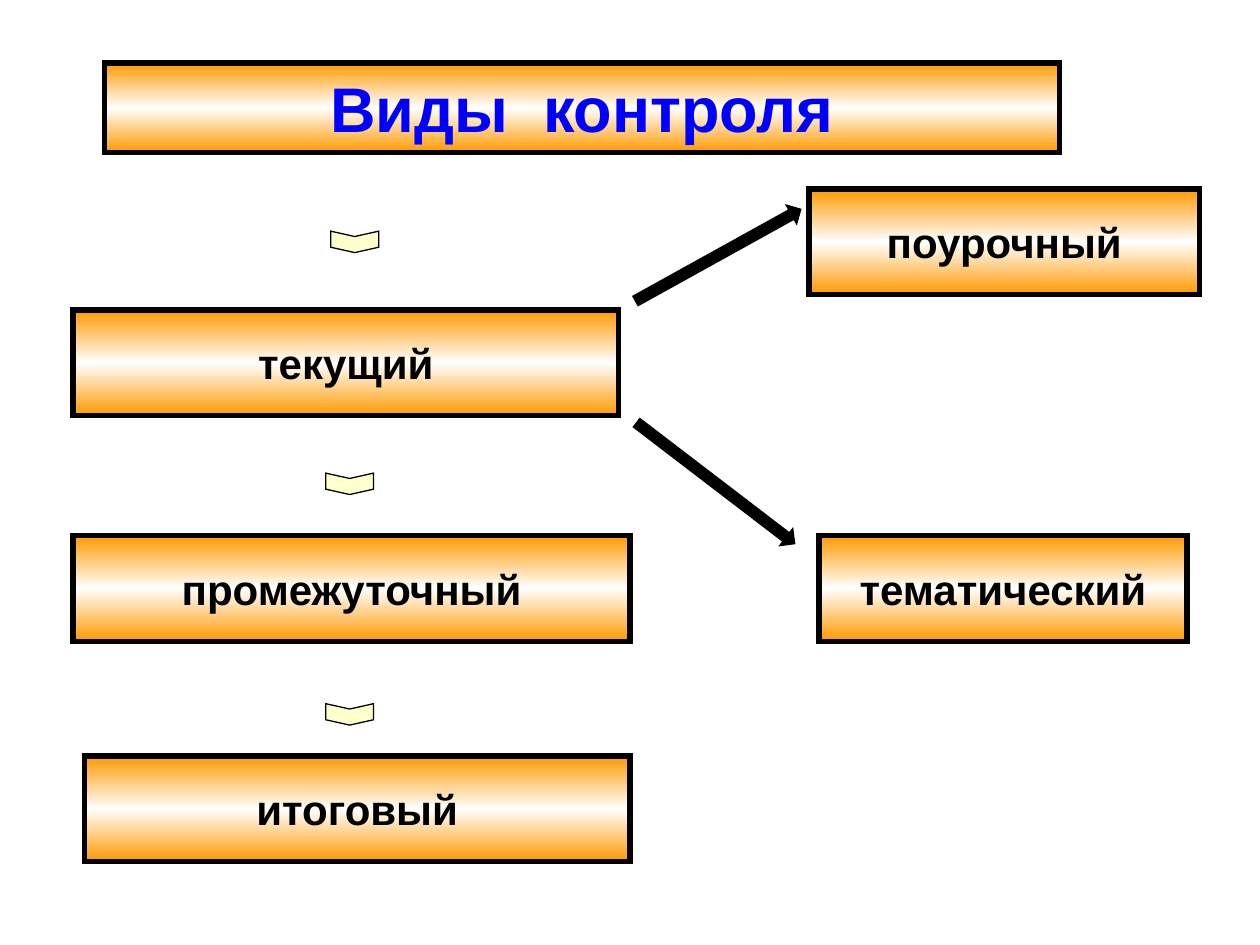
from copy import deepcopy

from lxml import etree
from pptx import Presentation
from pptx.dml.color import RGBColor
from pptx.enum.shapes import MSO_SHAPE
from pptx.enum.text import MSO_ANCHOR, PP_ALIGN
from pptx.oxml.ns import qn
from pptx.util import Inches, Pt

CHEVRON, ARROW, RECTANGLE = MSO_SHAPE.CHEVRON, MSO_SHAPE.RIGHT_ARROW, MSO_SHAPE.RECTANGLE
CENTER, MIDDLE = PP_ALIGN.CENTER, MSO_ANCHOR.MIDDLE
TITLE_ONLY = 5

COLORS = {"orange": "FF9900", "white": "FFFFFF", "black": "000000",
          "blue": "0000FF", "cream": "FFFFCC"}
BAND = [(0, "orange"), (0.5, "white"), (1, "orange")]

BOX_HEIGHT = 0.84
MARK_SIZE = (0.17, 0.38)
ARROW_HEIGHT = 0.17


def color(name):
    return RGBColor.from_string(COLORS[name])


def set_outline(shape, width):
    shape.line.color.rgb = color("black")
    shape.line.width = Pt(width)
    outline = shape._element.spPr.find(qn("a:ln"))
    etree.SubElement(outline, qn("a:miter")).set("lim", "800000")


def fill_band(shape):
    """Vertical gradient that is light in the middle."""
    shape.fill.gradient()
    shape.fill.gradient_angle = 270
    stop_list = shape._element.spPr.find(qn("a:gradFill")).find(qn("a:gsLst"))
    stop_list.append(deepcopy(stop_list[0]))
    for stop, (position, name) in zip(shape.fill.gradient_stops, BAND):
        stop.position = position
        stop.color.rgb = color(name)


def format_label(shape, text, size, color_name):
    """Give a box its band, border and centred bold text."""
    fill_band(shape)
    set_outline(shape, 3)
    frame = shape.text_frame
    frame.text = text
    frame.word_wrap = True
    frame.vertical_anchor = MIDDLE
    paragraph = frame.paragraphs[0]
    paragraph.alignment = CENTER
    for name, value in {"name": "Arial", "size": Pt(size), "bold": True}.items():
        setattr(paragraph.font, name, value)
    paragraph.font.color.rgb = color(color_name)


def place_title(slide, box, text):
    title = slide.shapes.title
    for name, value in zip(("left", "top", "width", "height"), box):
        setattr(title, name, Inches(value))
    format_label(title, text, 36, "blue")


def add_plain_shape(slide, kind, box):
    shape = slide.shapes.add_shape(kind, *map(Inches, box))
    shape.shadow.inherit = False
    return shape


def add_label(slide, left, top, width, text):
    shape = add_plain_shape(slide, RECTANGLE, (left, top, width, BOX_HEIGHT))
    format_label(shape, text, 24, "black")


def add_pointer(slide, kind, box, rotation, color_name):
    """Turned block pointer with a thin border."""
    shape = add_plain_shape(slide, kind, box)
    shape.rotation = rotation
    shape.fill.solid()
    shape.fill.fore_color.rgb = color(color_name)
    set_outline(shape, 0.75)
    return shape


def main():
    presentation = Presentation()
    presentation.slide_width, presentation.slide_height = Inches(10), Inches(7.5)
    slide = presentation.slides.add_slide(presentation.slide_layouts[TITLE_ONLY])

    place_title(slide, (0.83, 0.5, 7.58, 0.71), "Виды  контроля")

    # Kinds of control on the left, kinds of current control on the right
    for label in [(0.58, 2.46, 4.33, "текущий"),
                  (0.58, 4.25, 4.42, "промежуточный"),
                  (0.67, 6, 4.33, "итоговый"),
                  (6.42, 1.5, 3.1, "поурочный"),
                  (6.5, 4.25, 2.92, "тематический")]:
        add_label(slide, *label)

    # Downward marks between the left boxes
    for left, top in [(2.73, 1.73), (2.69, 3.65), (2.69, 5.48)]:
        mark = add_pointer(slide, CHEVRON, (left, top, *MARK_SIZE), 90, "cream")
        mark.adjustments[0] = 0.25

    # Arrows to the right boxes
    for left, top, length, rotation in [(4.95, 1.94, 1.5, 331), (4.89, 3.75, 1.58, 37.4)]:
        add_pointer(slide, ARROW, (left, top, length, ARROW_HEIGHT), rotation, "black")

    presentation.save("out.pptx")


if __name__ == "__main__":
    main()
